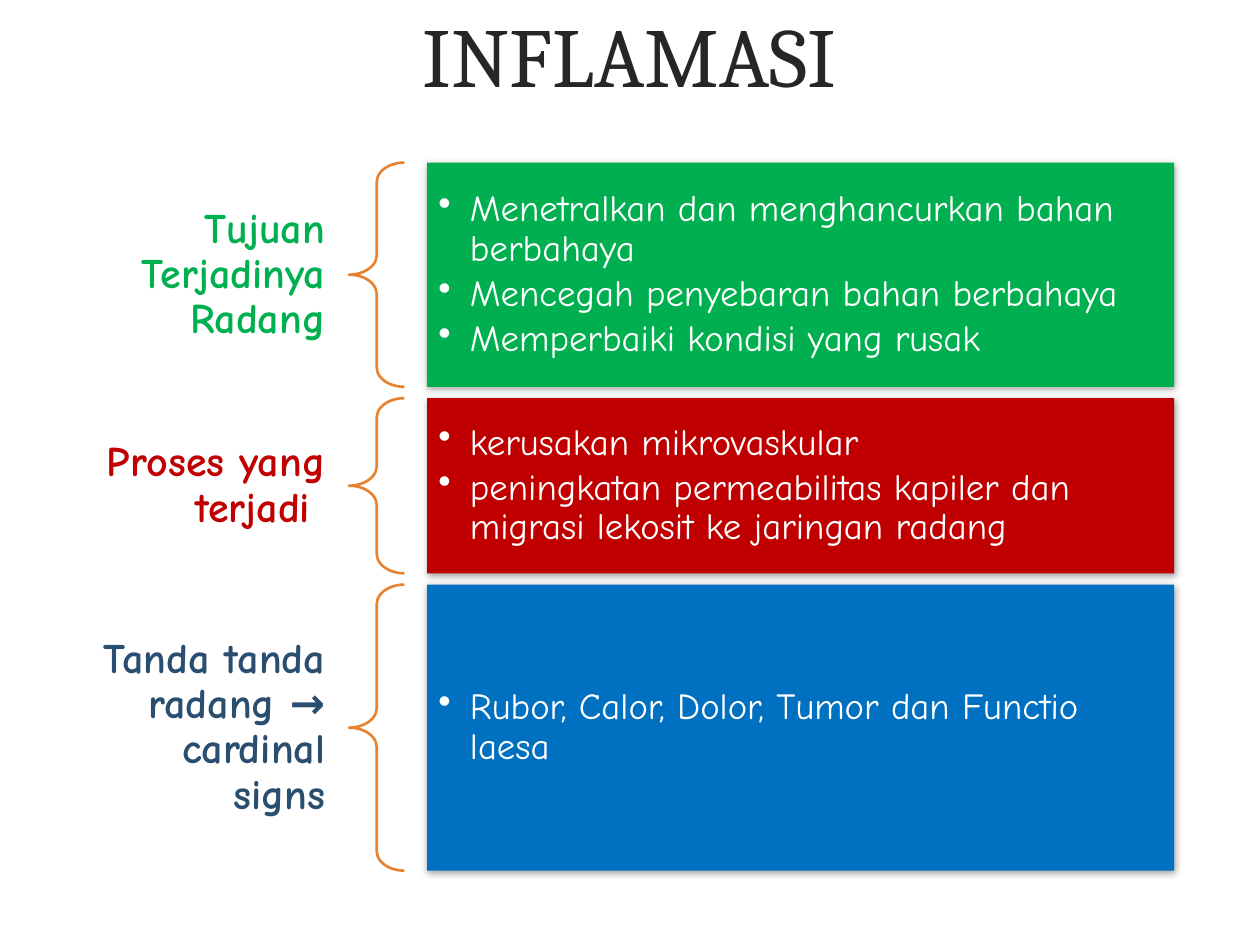
from dataclasses import dataclass

from lxml import etree
from pptx import Presentation, util as u
from pptx.dml.color import RGBColor
from pptx.enum import shapes, text
from pptx.oxml.ns import qn

TITLE_FONT, BODY_FONT = "Cambria", "Comic Neue"
WHITE, ORANGE, DARK = "FFFFFF", "E68230", "262626"
TOP, GAP = 1.29, 0.09
LABEL_LEFT, LABEL_WIDTH = 0.59, 2.18
BRACE_LEFT, BRACE_WIDTH = 2.77, 0.44
PANEL_LEFT, PANEL_WIDTH = 3.39, 5.93


@dataclass
class Section:
    label: str
    label_color: str
    panel_color: str
    height: float
    label_height: float
    points: list[str]


SECTIONS = [
    Section("Tujuan Terjadinya Radang", "00B050", "00B050", 1.78, 1.39, [
        "Menetralkan dan menghancurkan bahan berbahaya",
        "Mencegah penyebaran bahan berbahaya",
        "Memperbaiki kondisi yang rusak",
    ]),
    Section("Proses yang terjadi ", "C00000", "C00000", 1.39, 1.39, [
        "kerusakan mikrovaskular",
        "peningkatan permeabilitas kapiler dan migrasi lekosit ke jaringan radang",
    ]),
    Section("Tanda tanda radang → cardinal signs", "2A4E6F", "0070C0", 2.27, 2.27, [
        "Rubor, Calor, Dolor, Tumor dan Functio laesa",
    ]),
]


def rgb(color: str) -> RGBColor:
    return RGBColor.from_string(color)


def add_span(para, words: str, size: int, font: str, color: str, bold: bool = False) -> None:
    span = para.add_run()
    span.text = words
    span.font.size = u.Pt(size)
    span.font.name = font
    span.font.bold = bold
    span.font.color.rgb = rgb(color)


def set_frame(frame, side: float, edge: float) -> None:
    """Wrap and centre vertically, with side and top/bottom insets in inches."""
    frame.word_wrap = True
    frame.vertical_anchor = text.MSO_ANCHOR.MIDDLE
    frame.margin_left = frame.margin_right = u.Inches(side)
    frame.margin_top = frame.margin_bottom = u.Inches(edge)


def add_bullet(para) -> None:
    props = para._p.get_or_add_pPr()
    props.set("marL", str(u.Inches(0.25)))
    props.set("indent", str(u.Inches(-0.25)))
    etree.SubElement(props, qn("a:buChar"), char="•")


def add_soft_shadow(shape) -> None:
    shape.shadow.inherit = False
    effects = shape._element.spPr.find(qn("a:effectLst"))
    shadow = etree.SubElement(effects, qn("a:outerShdw"), blurRad=str(u.Pt(4)),
                              dist=str(u.Pt(1)), dir="5400000", rotWithShape="0")
    color = etree.SubElement(shadow, qn("a:srgbClr"), val="000000")
    etree.SubElement(color, qn("a:alpha"), val="37000")


def add_title(slide, words: str) -> None:
    title = slide.shapes.title
    title.left, title.top = u.Inches(0.6), u.Inches(-0.11)
    title.width, title.height = u.Inches(8.79), u.Inches(1.07)
    title.text_frame.vertical_anchor = text.MSO_ANCHOR.MIDDLE
    para = title.text_frame.paragraphs[0]
    para.alignment = text.PP_ALIGN.CENTER
    add_span(para, words, 48, TITLE_FONT, DARK)


def add_label(slide, section: Section, top: float) -> None:
    label_top = top + (section.height - section.label_height) / 2
    box = slide.shapes.add_textbox(u.Inches(LABEL_LEFT), u.Inches(label_top),
                                   u.Inches(LABEL_WIDTH), u.Inches(section.label_height))
    set_frame(box.text_frame, 0.19, 0.07)
    para = box.text_frame.paragraphs[0]
    para.alignment = text.PP_ALIGN.RIGHT
    para.line_spacing = 0.9
    add_span(para, section.label, 24, BODY_FONT, section.label_color, bold=True)


def add_brace(slide, top: float, height: float) -> None:
    brace = slide.shapes.add_shape(shapes.MSO_SHAPE.LEFT_BRACE, u.Inches(BRACE_LEFT),
                                   u.Inches(top), u.Inches(BRACE_WIDTH), u.Inches(height))
    brace.adjustments[0] = 0.35
    brace.adjustments[1] = 0.5
    brace.fill.background()
    brace.line.color.rgb = rgb(ORANGE)
    brace.line.width = u.Pt(1.5)
    brace.shadow.inherit = False


def add_panel(slide, section: Section, top: float) -> None:
    panel = slide.shapes.add_shape(shapes.MSO_SHAPE.RECTANGLE, u.Inches(PANEL_LEFT),
                                   u.Inches(top), u.Inches(PANEL_WIDTH),
                                   u.Inches(section.height))
    panel.fill.solid()
    panel.fill.fore_color.rgb = rgb(section.panel_color)
    panel.line.fill.background()
    add_soft_shadow(panel)
    frame = panel.text_frame
    set_frame(frame, 0.09, 0.09)
    for index, point in enumerate(section.points):
        para = frame.add_paragraph() if index else frame.paragraphs[0]
        para.level = 1
        para.alignment = text.PP_ALIGN.LEFT
        para.line_spacing = 0.9
        para.space_after = u.Pt(3)
        add_bullet(para)
        add_span(para, point, 21, BODY_FONT, WHITE)


def main() -> None:
    deck = Presentation()
    deck.slide_width, deck.slide_height = u.Inches(10), u.Inches(7.5)
    slide = deck.slides.add_slide(deck.slide_layouts[5])
    add_title(slide, "INFLAMASI")
    top = TOP
    for section in SECTIONS:
        add_label(slide, section, top)
        add_brace(slide, top, section.height)
        add_panel(slide, section, top)
        top += section.height + GAP
    deck.save("out.pptx")


if __name__ == "__main__":
    main()
